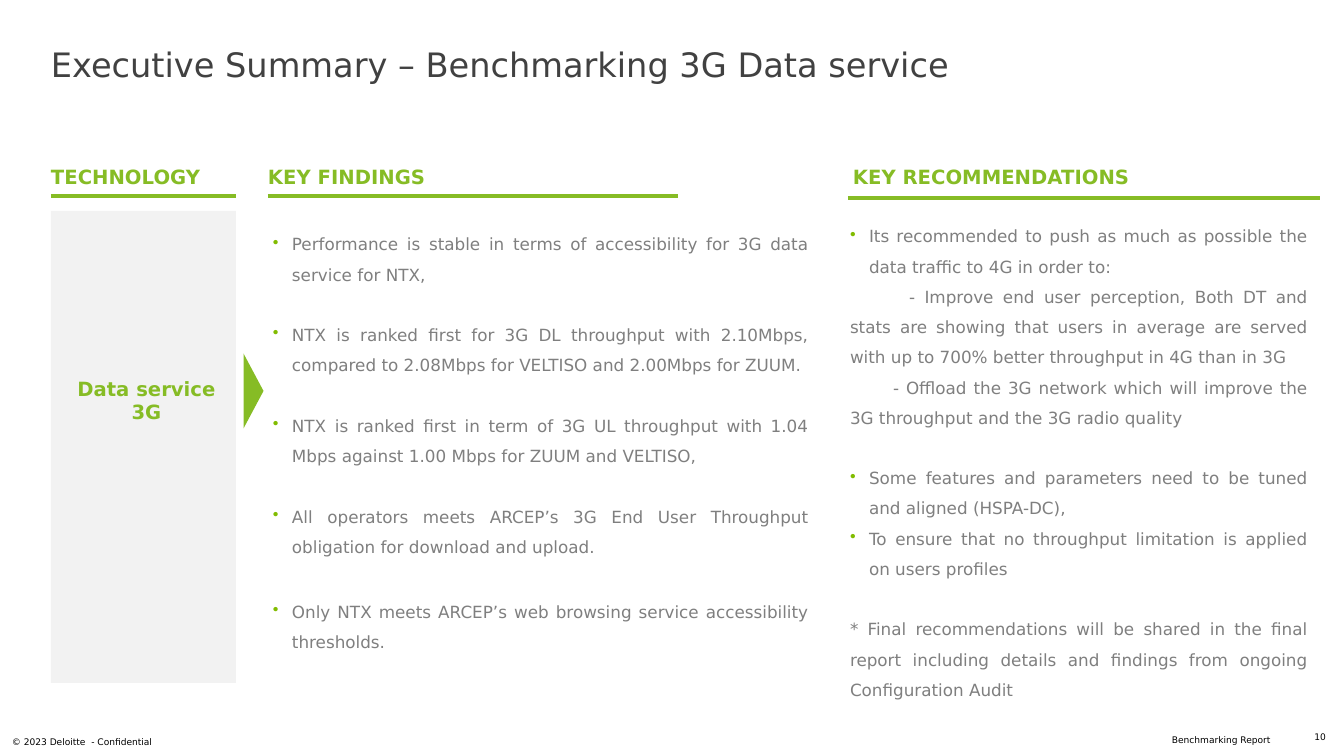
"""Build the executive summary slide on 3G data service benchmarking."""
from lxml.etree import SubElement
from pptx import Presentation
from pptx.dml.color import RGBColor
from pptx.enum.shapes import MSO_CONNECTOR, MSO_SHAPE
from pptx.enum.text import MSO_ANCHOR, MSO_AUTO_SIZE, PP_ALIGN
from pptx.oxml.ns import qn
from pptx.util import Pt

PX = 914400 / 100.8
FONT = "DejaVu Sans"
COLORS = {"green": "86BC25", "bullet": "81BC00", "panel": "F2F2F2",
          "title": "414141", "body": "7F7F7F", "black": "000000"}


def px(*lengths):
    return [round(n * PX) for n in lengths]


def write(tf, text, size=12, color="body", bold=False, align=PP_ALIGN.LEFT,
          spacing=None, before=0, left=0, first=0, bullet=False):
    p = tf.paragraphs[0] if not tf.text else tf.add_paragraph()
    p.alignment = align
    if spacing:
        p.line_spacing = spacing
    p.space_before = Pt(before)
    pPr = p._p.get_or_add_pPr()
    for name, value in zip(("marL", "indent"), px(left, first)):
        pPr.set(name, str(value))
    if bullet:
        clr = SubElement(pPr, qn("a:buClr"))
        SubElement(clr, qn("a:srgbClr")).set("val", COLORS["bullet"])
        SubElement(pPr, qn("a:buChar")).set("char", "•")
    r = p.add_run()
    r.text = text
    r.font.name, r.font.size, r.font.bold = FONT, Pt(size), bold
    r.font.color.rgb = RGBColor.from_string(COLORS[color])


prs = Presentation()
prs.slide_width, prs.slide_height = px(1344, 756)
s = prs.slides.add_slide(prs.slide_layouts[5])

title = s.shapes.title
title.left, title.top, title.width, title.height = px(51, 44, 1241, 37)
tf = title.text_frame
tf.margin_left = tf.margin_top = tf.margin_right = tf.margin_bottom = 0
tf.vertical_anchor = MSO_ANCHOR.TOP
tf.auto_size = MSO_AUTO_SIZE.NONE
write(tf, "Executive Summary – Benchmarking 3G Data service", size=24, color="title")

heading = dict(size=14, color="green", bold=True, spacing=0.9)
small = dict(size=6.5, color="black")
labels = [
    (51, 168, 457, 21, "TECHNOLOGY", heading),
    (268, 168, 336, 21, "KEY FINDINGS", heading),
    (853, 168, 410, 21, "KEY RECOMMENDATIONS", heading),
    (1172, 734, 172, 11, "Benchmarking Report", small),
    (12, 736, 454, 11, "© 2023 Deloitte  - Confidential", small),
    (1292, 731, 34, 11, "10", dict(small, align=PP_ALIGN.RIGHT)),
]
for x, y, w, h, text, style in labels:
    tf = s.shapes.add_textbox(*px(x, y, w, h)).text_frame
    tf.word_wrap = True
    tf.margin_left = tf.margin_top = tf.margin_right = tf.margin_bottom = 0
    write(tf, text, **style)

for x1, x2, y in [(51, 236, 196), (268, 678, 196), (848, 1320, 198)]:
    rule = s.shapes.add_connector(MSO_CONNECTOR.STRAIGHT, *px(x1, y, x2, y))
    rule.line.color.rgb = RGBColor.from_string(COLORS["green"])
    rule.line.width = Pt(3)
    SubElement(rule._element.spPr, qn("a:effectLst"))

panel = s.shapes.add_shape(MSO_SHAPE.RECTANGLE, *px(51, 211, 185, 472))
arrow = s.shapes.add_shape(MSO_SHAPE.ISOSCELES_TRIANGLE, *px(216, 381, 75, 20))
arrow.rotation = 90
for sp, color in [(panel, "panel"), (arrow, "green")]:
    sp.shadow.inherit = False
    sp.fill.solid()
    sp.fill.fore_color.rgb = RGBColor.from_string(COLORS[color])
    sp.line.fill.background()

tf = panel.text_frame
tf.word_wrap = True
tf.vertical_anchor = MSO_ANCHOR.MIDDLE
tf.margin_left, tf.margin_top, tf.margin_right, tf.margin_bottom = px(14, 8, 8, 102)
write(tf, "Data service 3G", size=14, color="green", bold=True, align=PP_ALIGN.CENTER)

item = dict(left=19, first=-19, bullet=True)
gap = 21.6
findings = [
    ("Performance is stable in terms of accessibility for 3G data service for NTX,", item),
    ("NTX is ranked first for 3G DL throughput with 2.10Mbps, compared to 2.08Mbps "
     "for VELTISO and 2.00Mbps for ZUUM.", dict(item, before=gap)),
    ("NTX is ranked first in term of 3G UL throughput with 1.04 Mbps against "
     "1.00 Mbps for ZUUM and VELTISO,", dict(item, before=gap)),
    ("All operators meets ARCEP’s 3G End User Throughput obligation for download "
     "and upload.", dict(item, before=gap)),
    ("Only NTX meets ARCEP’s web browsing service accessibility thresholds.",
     dict(item, before=25)),
]
recommendations = [
    ("Its recommended to push as much as possible the data traffic to 4G in order to:", item),
    ("- Improve end user perception, Both DT and stats are showing that users in "
     "average are served with up to 700% better throughput in 4G than in 3G", dict(first=59)),
    ("- Offload the 3G network which will improve the 3G throughput and the 3G "
     "radio quality", dict(first=43)),
    ("Some features and parameters need to be tuned and aligned (HSPA-DC),",
     dict(item, before=gap)),
    ("To ensure that no throughput limitation is applied on users profiles", item),
    ("* Final recommendations will be shared in the final report including details "
     "and findings from ongoing Configuration Audit", dict(before=gap)),
]
for x, y, w, h, paragraphs in [(263, 219, 556, 528, findings),
                               (840, 211, 478, 447, recommendations)]:
    tf = s.shapes.add_textbox(*px(x, y, w, h)).text_frame
    tf.word_wrap = True
    tf.margin_left, tf.margin_top, tf.margin_right, tf.margin_bottom = px(10, 5, 10, 5)
    for text, style in paragraphs:
        write(tf, text, align=PP_ALIGN.JUSTIFY, spacing=1.5, **style)

prs.save("out.pptx")
